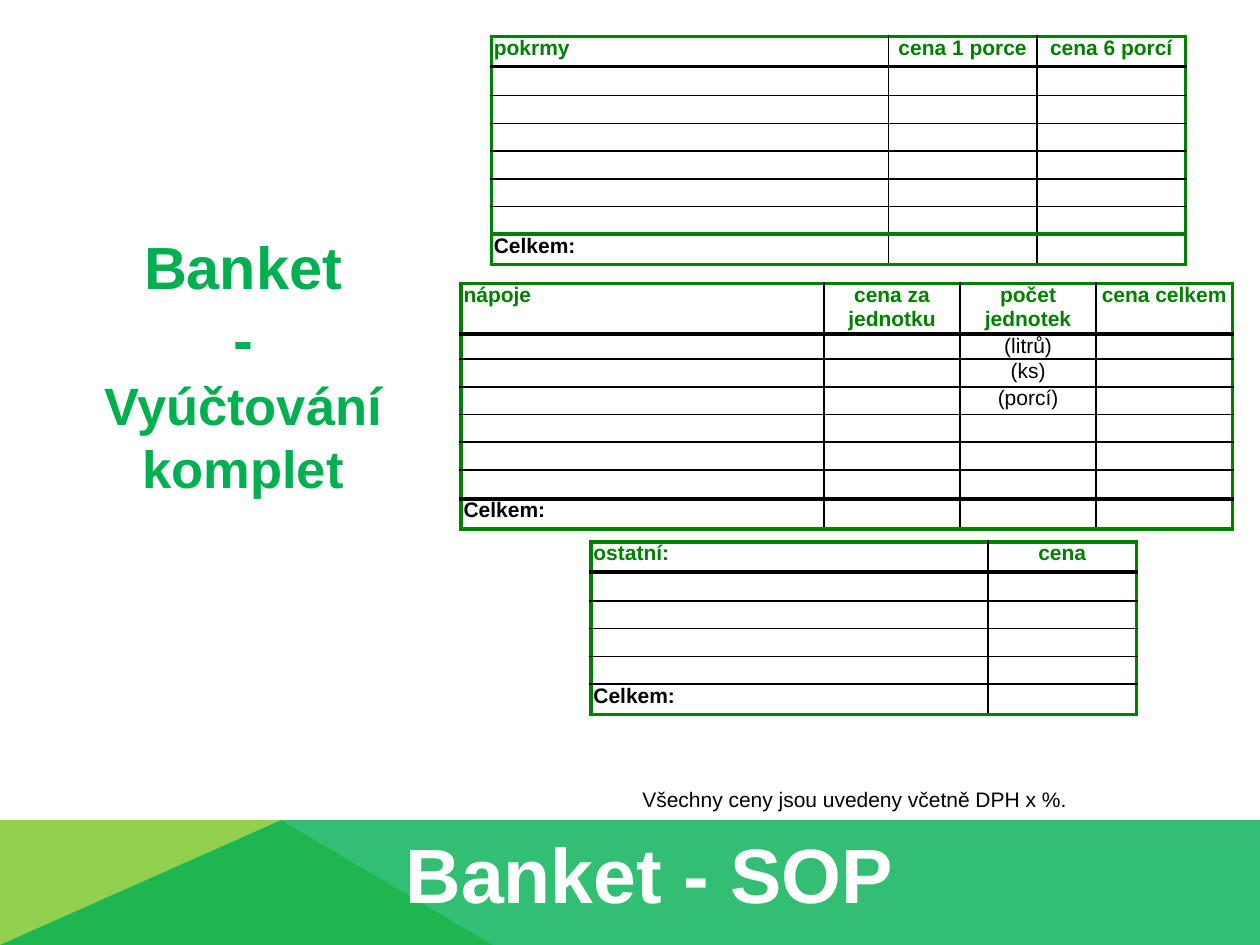
from lxml.etree import SubElement
from pptx import Presentation
from pptx.dml.color import RGBColor
from pptx.enum.text import MSO_ANCHOR as Anchor, MSO_AUTO_SIZE as AutoSize, PP_ALIGN as Align
from pptx.oxml.ns import qn
from pptx.util import Inches, Pt

COLORS = {"lime": "92D050", "green": "00B050", "frame": "008000",
          "black": "000000", "white": "FFFFFF"}
FONT = "Arial"
THICK, THIN = 2.25, 1

# Content
HEADLINE = "Banket - SOP"
SIDE_LINES = [("Banket", 34), ("-", 34), ("Vyúčtování", 30), ("komplet", 30)]
PRICE_NOTE = "Všechny ceny jsou uvedeny včetně DPH x %."

BANDS = [  # outline, colour, opacity in percent
    ([(0, 7.5), (0, 6.51), (2.23, 6.51), (3.91, 7.5)], "lime", 100),
    ([(0, 7.5), (2.23, 6.51), (10, 6.51), (10, 7.5)], "green", 80),
]

BILLS = [  # "total_line" is the rule above the Celkem row
    {"header": ["pokrmy", "cena 1 porce", "cena 6 porcí"], "units": [],
     "at": (3.9, 0.29), "cols": [3.15, 1.18, 1.18],
     "rows": [0.24, 0.23] + [0.22] * 5 + [0.24], "total_line": ("frame", THICK)},
    {"header": ["nápoje", "cena za jednotku", "počet jednotek", "cena celkem"],
     "units": ["(litrů)", "(ks)", "(porcí)"],
     "at": (3.66, 2.25), "cols": [2.88, 1.08, 1.08, 1.08],
     "rows": [0.4, 0.2] + [0.22] * 4 + [0.23, 0.24], "total_line": ("black", THICK)},
    {"header": ["ostatní:", "cena"], "units": [],
     "at": (4.69, 4.3), "cols": [3.15, 1.18],
     "rows": [0.24, 0.23] + [0.22] * 3 + [0.24], "total_line": ("black", THIN)},
]
UNIT_COLUMN = 2


def rgb(name):
    return RGBColor.from_string(COLORS[name])


def format_line(paragraph, size, color, bold=False, align=Align.LEFT):
    paragraph.alignment = align
    for run in paragraph.runs:
        run.font.name, run.font.size, run.font.bold = FONT, Pt(size), bold
        run.font.color.rgb = rgb(color)


def add_band(slide, points, color, opacity):
    corners = [(Inches(x), Inches(y)) for x, y in points]
    builder = slide.shapes.build_freeform(*corners[0], scale=1.0)
    builder.add_line_segments(corners[1:], close=True)
    band = builder.convert_to_shape()
    band.shadow.inherit = False
    band.line.fill.background()
    band.fill.solid()
    band.fill.fore_color.rgb = rgb(color)
    if opacity < 100:
        tint = band.element.spPr.find(f"{qn('a:solidFill')}/{qn('a:srgbClr')}")
        SubElement(tint, qn("a:alpha"), val=str(opacity * 1000))


def add_border(cell, side, color, width):
    border = SubElement(cell._tc.get_or_add_tcPr(), qn(f"a:ln{side}"), w=str(Pt(width)))
    SubElement(SubElement(border, qn("a:solidFill")), qn("a:srgbClr"), val=COLORS[color])


def add_bill(slide, bill):
    cols, rows = bill["cols"], bill["rows"]
    last_row, last_col = len(rows) - 1, len(cols) - 1
    left, top = bill["at"]
    table = slide.shapes.add_table(len(rows), len(cols), Inches(left), Inches(top),
                                   Inches(sum(cols)), Inches(sum(rows))).table
    table.first_row = table.horz_banding = False
    for column, width in zip(table.columns, cols):
        column.width = Inches(width)
    for row, height in zip(table.rows, rows):
        row.height = Inches(height)

    texts = {(0, c): label for c, label in enumerate(bill["header"])}
    texts.update({(r, UNIT_COLUMN): unit for r, unit in enumerate(bill["units"], 1)})
    texts[last_row, 0] = "Celkem:"

    # Horizontal and vertical rules, numbered from the top left
    frame, inner = ("frame", THICK), ("black", THIN)
    across = [frame, ("black", THICK)] + [inner] * (last_row - 2) + [bill["total_line"], frame]
    down = [frame] + [inner] * last_col + [frame]

    for r in range(len(rows)):
        for c in range(len(cols)):
            cell = table.cell(r, c)
            cell.margin_left = cell.margin_right = Inches(0.02)
            cell.margin_top = cell.margin_bottom = 0
            paragraph = cell.text_frame.paragraphs[0]
            if (r, c) in texts:
                paragraph.text = texts[r, c]
                format_line(paragraph, 12, "black" if r else "frame",
                            bold=r in (0, last_row),
                            align=Align.CENTER if c else Align.LEFT)
            else:
                SubElement(paragraph._p, qn("a:endParaRPr"), sz="1200")
            for side, rule in zip("LRTB", (down[c], down[c + 1], across[r], across[r + 1])):
                add_border(cell, side, *rule)
            cell.fill.background()


def place_text(shape, box, lines, color, bold=False, align=Align.CENTER, anchor=Anchor.TOP):
    shape.left, shape.top, shape.width, shape.height = map(Inches, box)
    frame = shape.text_frame
    frame.text = "\n".join(text for text, size in lines)
    frame.word_wrap = True
    frame.auto_size = AutoSize.SHAPE_TO_FIT_TEXT
    frame.vertical_anchor = anchor
    for paragraph, (text, size) in zip(frame.paragraphs, lines):
        format_line(paragraph, size, color, bold, align)
    return frame


def main():
    prs = Presentation()
    prs.slide_width, prs.slide_height = Inches(10), Inches(7.5)
    slide = prs.slides.add_slide(prs.slide_layouts[5])

    # Bottom bands, with the headline in front of them
    for band in BANDS:
        add_band(slide, *band)
    headline = slide.shapes.title
    slide.shapes.element.append(headline.element)
    place_text(headline, (1.22, 6.51, 7.87, 0.84), [(HEADLINE, 44)], "white", bold=True)

    # Side heading
    side = slide.shapes.add_textbox(0, 0, 0, 0)
    place_text(side, (0, 1.78, 3.86, 2.26), SIDE_LINES, "green", bold=True)

    # Price note
    note = slide.shapes.add_textbox(0, 0, 0, 0)
    note_frame = place_text(note, (5, 6.19, 3.6, 0.25), [(PRICE_NOTE, 12)], "black",
                            align=Align.LEFT, anchor=Anchor.MIDDLE)
    note_frame.margin_bottom = 0

    # Bill tables
    for bill in BILLS:
        add_bill(slide, bill)

    prs.save("out.pptx")


if __name__ == "__main__":
    main()
